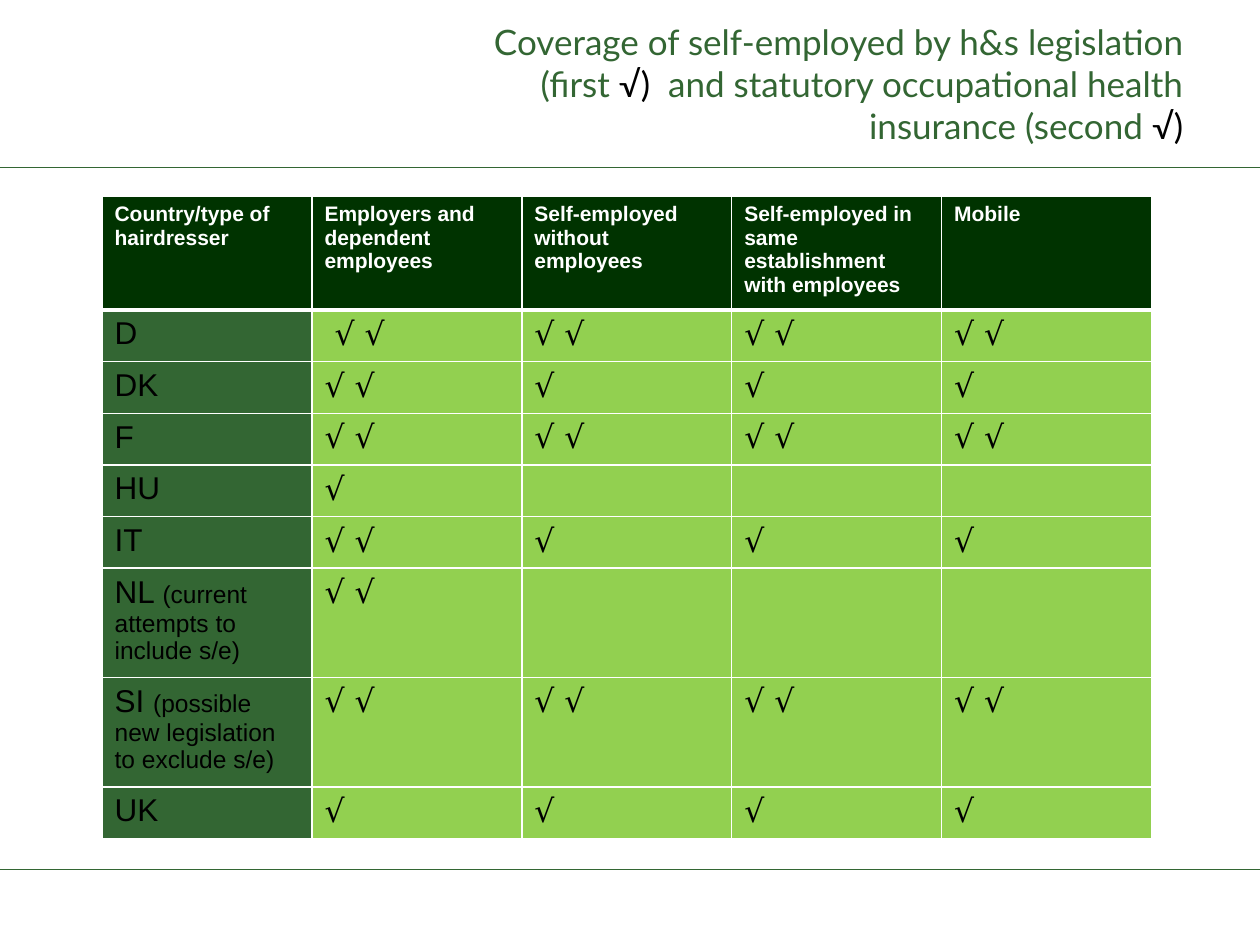
import pptx
import pptx.dml.color
import pptx.enum.shapes
import pptx.enum.text
import pptx.oxml
import pptx.oxml.ns
import pptx.util

THEME = {
    "green": "336633", "dark": "003300", "light": "92D050",
    "black": "000000", "white": "FFFFFF",
    "title_font": "Lato", "body_font": "Arial", "mark_font": "DejaVu Sans",
    "title_size": 20, "header_size": 12, "body_size": 18, "note_size": 14,
    "rule_width": 0.75, "border": 1, "header_border": 3,
}

TITLE = [
    ("Coverage of self-employed by h&s legislation (first ", "green"),
    ("√)", "black"),
    ("  and statutory occupational health insurance (second ", "green"),
    ("√)", "black"),
]
HEADERS = [
    "Country/type of hairdresser",
    "Employers and dependent employees",
    "Self-employed without employees",
    "Self-employed in same establishment  with employees",
    "Mobile",
]
BOTH, ONE = "√ √", "√"
# country, note, marks for each type of hairdresser
COUNTRIES = [
    ("D", "", [" √ √", BOTH, BOTH, BOTH]),
    ("DK", "", [BOTH, ONE, ONE, ONE]),
    ("F", "", [BOTH] * 4),
    ("HU", "", [ONE, "", "", ""]),
    ("IT", "", [BOTH, ONE, ONE, ONE]),
    ("NL ", "(current attempts to include s/e)", [BOTH, "", "", ""]),
    ("SI ", "(possible new legislation to exclude s/e)", [BOTH] * 4),
    ("UK", "", [ONE] * 4),
]

WIDTH, HEIGHT = 10, 7.5
RULES = [1.33, 6.9]
TITLE_BOX = (3.44, 0.17, 6.05, 0.99)
TABLE_LEFT, TABLE_TOP, TABLE_WIDTH, ROW_HEIGHT = 0.81, 1.56, 8.33, 0.41

Inches = pptx.util.Inches
Pt = pptx.util.Pt


def color(name):
    return pptx.dml.color.RGBColor.from_string(THEME[name])


def add_run(paragraph, text, font, size, color_name, bold=False):
    run = paragraph.add_run()
    run.text = text
    run.font.name = THEME[font]
    run.font.size = Pt(THEME[size])
    run.font.color.rgb = color(color_name)
    run.font.bold = bold


def add_rule(slide, top):
    rule = slide.shapes.add_connector(
        pptx.enum.shapes.MSO_CONNECTOR.STRAIGHT,
        0, Inches(top), Inches(WIDTH), Inches(top))
    rule.line.color.rgb = color("green")
    rule.line.width = Pt(THEME["rule_width"])
    pptx.oxml.ns.qn("a:effectLst")
    rule._element.spPr.append(pptx.oxml.parse_xml(
        f'<a:effectLst {pptx.oxml.ns.nsdecls("a")}/>'))


def add_title(slide):
    frame = slide.shapes.add_textbox(*map(Inches, TITLE_BOX)).text_frame
    frame.word_wrap = True
    frame.vertical_anchor = pptx.enum.text.MSO_ANCHOR.MIDDLE
    paragraph = frame.paragraphs[0]
    paragraph.alignment = pptx.enum.text.PP_ALIGN.RIGHT
    for text, color_name in TITLE:
        add_run(paragraph, text, "title_font", "title_size", color_name)


def style_cell(cell, fill, top="border", bottom="border"):
    """Fill a cell and draw white borders; the borders precede the fill in XML."""
    properties = cell._tc.get_or_add_tcPr()
    sides = {"lnL": "border", "lnR": "border", "lnT": top, "lnB": bottom}
    for side, width in sides.items():
        properties.append(pptx.oxml.parse_xml(
            f'<a:{side} {pptx.oxml.ns.nsdecls("a")} w="{Pt(THEME[width])}">'
            f'<a:solidFill><a:srgbClr val="{THEME["white"]}"/></a:solidFill>'
            f'</a:{side}>'))
    cell.fill.solid()
    cell.fill.fore_color.rgb = color(fill)


def add_coverage_table(slide):
    row_count, column_count = len(COUNTRIES) + 1, len(HEADERS)
    table = slide.shapes.add_table(
        row_count, column_count, Inches(TABLE_LEFT), Inches(TABLE_TOP),
        Inches(TABLE_WIDTH), Inches(ROW_HEIGHT * row_count)).table
    for column, header in enumerate(HEADERS):
        cell = table.cell(0, column)
        style_cell(cell, "dark", bottom="header_border")
        add_run(cell.text_frame.paragraphs[0], header,
                "body_font", "header_size", "white", bold=True)
    for row, (country, note, marks) in enumerate(COUNTRIES, start=1):
        top = "header_border" if row == 1 else "border"
        cell = table.cell(row, 0)
        style_cell(cell, "green", top)
        paragraph = cell.text_frame.paragraphs[0]
        add_run(paragraph, country, "body_font", "body_size", "black")
        if note:
            add_run(paragraph, note, "body_font", "note_size", "black")
        for column, mark in enumerate(marks, start=1):
            cell = table.cell(row, column)
            style_cell(cell, "light", top)
            if mark:
                add_run(cell.text_frame.paragraphs[0], mark,
                        "mark_font", "body_size", "black")


def main():
    presentation = pptx.Presentation()
    presentation.slide_width = Inches(WIDTH)
    presentation.slide_height = Inches(HEIGHT)
    slide = presentation.slides.add_slide(presentation.slide_layouts[6])
    for top in RULES:
        add_rule(slide, top)
    add_title(slide)
    add_coverage_table(slide)
    presentation.save("out.pptx")


if __name__ == "__main__":
    main()
